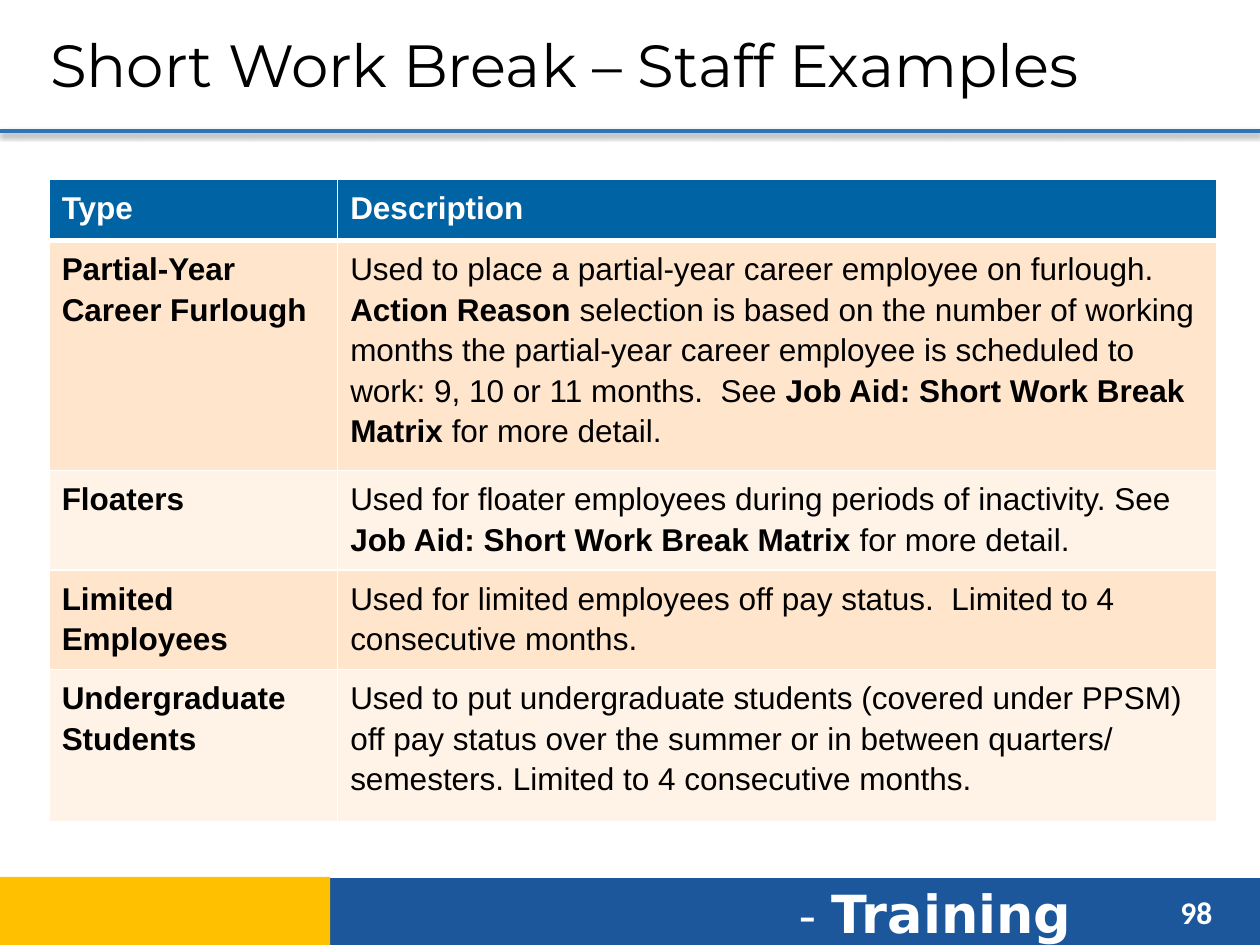
from dataclasses import dataclass

import pptx
import pptx.dml.color
import pptx.enum.shapes
import pptx.enum.text
import pptx.oxml
import pptx.oxml.ns
import pptx.util


@dataclass(frozen=True)
class Theme:
    blue: str = "1D579B"
    gold: str = "FFC000"
    rule: str = "2E75B6"
    header: str = "0064A4"
    bands: tuple = ("FFE5CC", "FFF3E7")
    white: str = "FFFFFF"
    black: str = "000000"
    title_size: int = 34
    body_size: int = 18
    dash_size: int = 28
    footer_size: int = 30


@dataclass(frozen=True)
class Box:
    """Left, top, width and height in percent of the slide."""
    left: float
    top: float
    width: float
    height: float


@dataclass(frozen=True)
class Run:
    text: str
    font: str = "Arial"
    size: int = Theme.body_size
    color: str = Theme.black
    bold: bool = False


@dataclass(frozen=True)
class Example:
    kind: str
    description: tuple
    height: float


THEME = Theme()
WIDTH, HEIGHT = pptx.util.Inches(10), pptx.util.Inches(7.5)
COLUMNS = (22.9, 69.8)
HEADER_HEIGHT = 6.53
MATRIX = (Run("Job Aid: Short Work Break Matrix", bold=True), Run(" for more detail."))
EXAMPLES = (
    Example("Partial-Year Career Furlough", (
        Run("Used to place a partial-year career employee on furlough. "),
        Run("Action Reason ", bold=True),
        Run("selection is based on the number of working months the partial-year career "
            "employee is scheduled to work: 9, 10 or 11 months.  See "),
        *MATRIX), 17.47),
    Example("Floaters", (
        Run("Used for floater employees during periods of inactivity. See "), *MATRIX), 6.93),
    Example("Limited Employees", (
        Run("Used for limited employees off pay status.  Limited to 4 consecutive months."),), 9.87),
    Example("Undergraduate Students", (
        Run("Used to put undergraduate students (covered under PPSM) off pay status over the "
            "summer or in between quarters/\nsemesters. Limited to 4 consecutive months."),), 16.13),
)


def across(percent: float) -> int:
    return round(WIDTH * percent / 100)


def down(percent: float) -> int:
    return round(HEIGHT * percent / 100)


def place(box: Box) -> tuple:
    return across(box.left), down(box.top), across(box.width), down(box.height)


def rgb(color: str) -> pptx.dml.color.RGBColor:
    return pptx.dml.color.RGBColor.from_string(color)


def add_runs(p, runs: tuple) -> None:
    """Add the runs in order, with a line break at each newline."""
    for run in runs:
        for i, line in enumerate(run.text.split("\n")):
            if i:
                p.add_line_break()
            r = p.add_run()
            r.text = line
            r.font.name, r.font.size, r.font.bold = run.font, pptx.util.Pt(run.size), run.bold
            r.font.color.rgb = rgb(run.color)


def add_text(s, box: Box, *runs: Run):
    tf = s.shapes.add_textbox(*place(box)).text_frame
    tf.word_wrap = True
    add_runs(tf.paragraphs[0], runs)
    return tf


def add_bar(s, box: Box, color: str) -> None:
    sp = s.shapes.add_shape(pptx.enum.shapes.MSO_SHAPE.RECTANGLE, *place(box))
    sp.shadow.inherit = False
    sp.fill.solid()
    sp.fill.fore_color.rgb = rgb(color)
    sp.line.fill.background()


def add_rule(s, top: float) -> None:
    """Draw the full-width line with its soft shadow below."""
    line = s.shapes.add_connector(
        pptx.enum.shapes.MSO_CONNECTOR.STRAIGHT, 0, down(top), WIDTH, down(top))
    line.line.color.rgb = rgb(THEME.rule)
    line.line.width = pptx.util.Pt(2.25)
    line.element.spPr.append(pptx.oxml.parse_xml(
        f'<a:effectLst {pptx.oxml.ns.nsdecls("a")}>'
        f'<a:outerShdw blurRad="{pptx.util.Pt(3.1)}" dist="{pptx.util.Pt(1.6)}" dir="5400000" '
        f'rotWithShape="0"><a:srgbClr val="{THEME.black}"><a:alpha val="38000"/></a:srgbClr>'
        '</a:outerShdw></a:effectLst>'))


def fill_cell(cell, runs: tuple, fill: str, top: int, bottom: int) -> None:
    """Write a cell; top and bottom are border widths in points."""
    tc_pr = cell._tc.get_or_add_tcPr()
    for side, width in (("L", 1), ("R", 1), ("T", top), ("B", bottom)):
        tc_pr.append(pptx.oxml.parse_xml(
            f'<a:ln{side} {pptx.oxml.ns.nsdecls("a")} w="{pptx.util.Pt(width)}">'
            f'<a:solidFill><a:srgbClr val="{THEME.white}"/></a:solidFill></a:ln{side}>'))
    cell.fill.solid()
    cell.fill.fore_color.rgb = rgb(fill)
    p = cell.text_frame.paragraphs[0]
    p.line_spacing = 1.15
    add_runs(p, runs)


def add_examples(s, box: Box) -> None:
    frame = s.shapes.add_table(len(EXAMPLES) + 1, len(COLUMNS), *place(box))
    table = frame.table
    for column, width in zip(table.columns, COLUMNS):
        column.width = across(width)
    table.rows[0].height = down(HEADER_HEIGHT)
    for cell, label in zip(table.rows[0].cells, ("Type", "Description")):
        fill_cell(cell, (Run(label, color=THEME.white, bold=True),), THEME.header, 1, 3)
    for i, example in enumerate(EXAMPLES):
        row = table.rows[i + 1]
        row.height = down(example.height)
        contents = ((Run(example.kind, bold=True),), example.description)
        for cell, runs in zip(row.cells, contents):
            fill_cell(cell, runs, THEME.bands[i % 2], 1 if i else 3, 1)
    frame.height = down(box.height)


def main() -> None:
    prs = pptx.Presentation()
    prs.slide_width, prs.slide_height = WIDTH, HEIGHT
    s = prs.slides.add_slide(prs.slide_layouts[6])

    add_bar(s, Box(26.1, 92.93, 73.9, 7.33), THEME.blue)
    add_text(s, Box(62.4, 92.53, 28, 8.13),
             Run("- ", "DejaVu Sans", THEME.dash_size, THEME.white),
             Run("Training", "DejaVu Sans", THEME.footer_size, THEME.white, True))
    add_rule(s, 13.87)
    add_text(s, Box(92.7, 93.87, 6, 5.33),
             Run("98", "Calibri", THEME.body_size, THEME.white, True))
    add_bar(s, Box(-0.1, 92.8, 26.3, 7.33), THEME.gold)

    title = add_text(s, Box(3, 0.53, 92.7, 12.4),
                     Run("Short Work Break – Staff Examples", "Montserrat", THEME.title_size))
    title.vertical_anchor = pptx.enum.text.MSO_ANCHOR.MIDDLE
    add_examples(s, Box(3.9, 18.93, 92.7, 68))

    prs.save("out.pptx")


if __name__ == "__main__":
    main()
